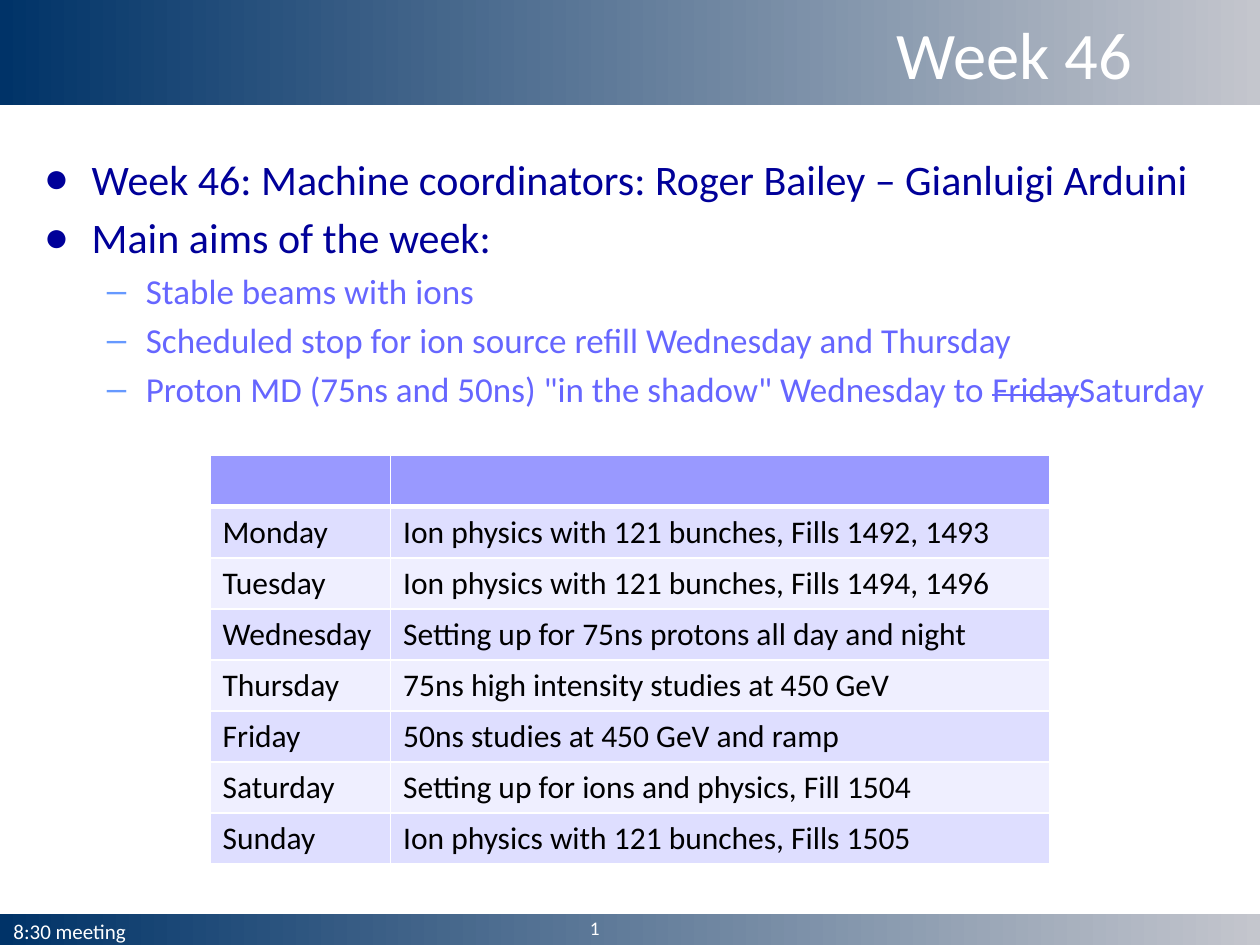
from dataclasses import dataclass

from lxml.etree import SubElement as Sub
from pptx import Presentation
from pptx.dml.color import RGBColor as Rgb
from pptx.enum.shapes import MSO_SHAPE as Shape
from pptx.enum.text import MSO_ANCHOR as Anchor, PP_ALIGN as Align
from pptx.oxml.ns import qn
from pptx.util import Inches, Pt


@dataclass(frozen=True)
class Theme:
    font: str = "Calibri"
    white: str = "FFFFFF"
    black: str = "000000"
    dark: str = "003368"
    pale: str = "C4C6CD"
    navy: str = "000099"
    violet: str = "6666FF"
    dash: str = "6699FF"
    head: str = "9999FF"
    bands: tuple = ("DEDEFF", "EFEFFF")
    title: int = 38
    main: int = 24
    sub: int = 20
    cell: int = 18
    foot: int = 12
    page: int = 11


def write(para, text, size, color, font, strike=False):
    """Add one formatted run to a paragraph."""
    run = para.add_run()
    run.text = text
    run.font.size, run.font.name = Pt(size), font
    run.font.color.rgb = Rgb.from_string(color)
    if strike:
        run.font._element.set("strike", "sngStrike")


def bullet(para, mark, color, left, hang, level):
    """Give a paragraph a coloured bullet and a hanging indent."""
    para.level = level
    props = para._p.get_or_add_pPr()
    props.set("marL", str(Inches(left)))
    props.set("indent", str(-Inches(hang)))
    Sub(Sub(props, qn("a:buClr")), qn("a:srgbClr"), val=color)
    Sub(props, qn("a:buFont"), typeface="Arial")
    Sub(props, qn("a:buChar"), char=mark)


def border(cell, color, **widths):
    """Draw the cell edges L, R, T and B in that order."""
    props = cell._tc.get_or_add_tcPr()
    for side, width in widths.items():
        line = Sub(props, qn(f"a:ln{side}"), w=str(Pt(width)))
        Sub(Sub(line, qn("a:solidFill")), qn("a:srgbClr"), val=color)


class Deck:
    COLS, ROWS = 120, 90

    def __init__(self, theme):
        self.theme = theme
        self.prs = Presentation()
        self.prs.slide_width, self.prs.slide_height = Inches(10), Inches(7.5)
        self.slide = self.prs.slides.add_slide(self.prs.slide_layouts[6])

    def x(self, cols):
        return round(self.prs.slide_width * cols / self.COLS)

    def y(self, rows):
        return round(self.prs.slide_height * rows / self.ROWS)

    def area(self, left, top, width, height):
        return self.x(left), self.y(top), self.x(width), self.y(height)

    def band(self, *area):
        bar = self.slide.shapes.add_shape(Shape.RECTANGLE, *self.area(*area))
        bar.shadow.inherit = False
        bar.line.fill.background()
        bar.fill.gradient()
        bar.fill.gradient_angle = 0
        for stop, color in zip(bar.fill.gradient_stops, (self.theme.dark, self.theme.pale)):
            stop.color.rgb = Rgb.from_string(color)

    def box(self, *area, anchor=Anchor.TOP):
        box = self.slide.shapes.add_textbox(*self.area(*area))
        box.text_frame.word_wrap = True
        box.text_frame.vertical_anchor = anchor
        return box

    def label(self, text, *area, size, anchor=Anchor.BOTTOM, align=Align.LEFT):
        para = self.box(*area, anchor=anchor).text_frame.paragraphs[0]
        para.alignment = align
        write(para, text, size=size, color=self.theme.white, font=self.theme.font)

    def points(self, items, *area):
        t = self.theme
        styles = (
            (t.main, t.navy, ("●", t.navy, 0.38, 0.38)),
            (t.sub, t.violet, ("–", t.dash, 0.81, 0.31)),
        )
        box = self.box(*area)
        box.fill.solid()
        box.fill.fore_color.rgb = Rgb.from_string(t.white)
        frame = box.text_frame
        for i, (level, *parts) in enumerate(items):
            size, color, mark = styles[level]
            para = frame.add_paragraph() if i else frame.paragraphs[0]
            bullet(para, *mark, level)
            if i:
                para.space_before = Pt(size * 0.2)
            for text, strike in parts:
                write(para, text, size=size, color=color, font=t.font, strike=strike)

    def table(self, rows, widths, *area):
        t = self.theme
        grid = self.slide.shapes.add_table(len(rows), len(widths), *self.area(*area)).table
        grid.first_row = grid.horz_banding = False
        for col, width in zip(grid.columns, widths):
            col.width = self.x(width)
        for r, row in enumerate(rows):
            fill = t.bands[(r - 1) % 2] if r else t.head
            for c, text in enumerate(row):
                cell = grid.cell(r, c)
                border(cell, t.white, L=1, R=1, T=3 if r == 1 else 1, B=1 if r else 3)
                cell.fill.solid()
                cell.fill.fore_color.rgb = Rgb.from_string(fill)
                if text:
                    write(cell.text_frame.paragraphs[0], text,
                          size=t.cell, color=t.black, font=t.font)


AIMS = (
    (0, ("Week 46: Machine coordinators: Roger Bailey – Gianluigi Arduini", False)),
    (0, ("Main aims of the week:", False)),
    (1, ("Stable beams with ions", False)),
    (1, ("Scheduled stop for ion source refill Wednesday and Thursday", False)),
    (1, ('Proton MD (75ns and 50ns) "in the shadow" Wednesday to ', False),
     ("Friday", True), ("Saturday", False)),
)
DAYS = (
    ("", ""),
    ("Monday", "Ion physics with 121 bunches, Fills 1492, 1493"),
    ("Tuesday", "Ion physics with 121 bunches, Fills 1494, 1496"),
    ("Wednesday", "Setting up for 75ns protons all day and night"),
    ("Thursday", "75ns high intensity studies at 450 GeV"),
    ("Friday", "50ns studies at 450 GeV and ramp"),
    ("Saturday", "Setting up for ions and physics, Fill 1504"),
    ("Sunday", "Ion physics with 121 bunches, Fills 1505"),
)


def main():
    theme = Theme()
    deck = Deck(theme)

    # Footer and header bands
    deck.band(0, 87, 120, 3)
    deck.band(0, 0, 120, 10)

    # Title and aims
    deck.label("Week 46", 10, 0, 99, 10, size=theme.title,
               anchor=Anchor.MIDDLE, align=Align.RIGHT)
    deck.points(AIMS, 3, 14, 114, 70)

    # Footer text
    deck.label("8:30 meeting", 0.1, 87.5, 47.6, 3, size=theme.foot)
    deck.label("1", 55, 87.1, 15, 3, size=theme.page)

    # Plan of the week
    deck.table(DAYS, (17.2, 62.8), 20, 43.4, 80, 38.9)

    deck.prs.save("out.pptx")


if __name__ == "__main__":
    main()
